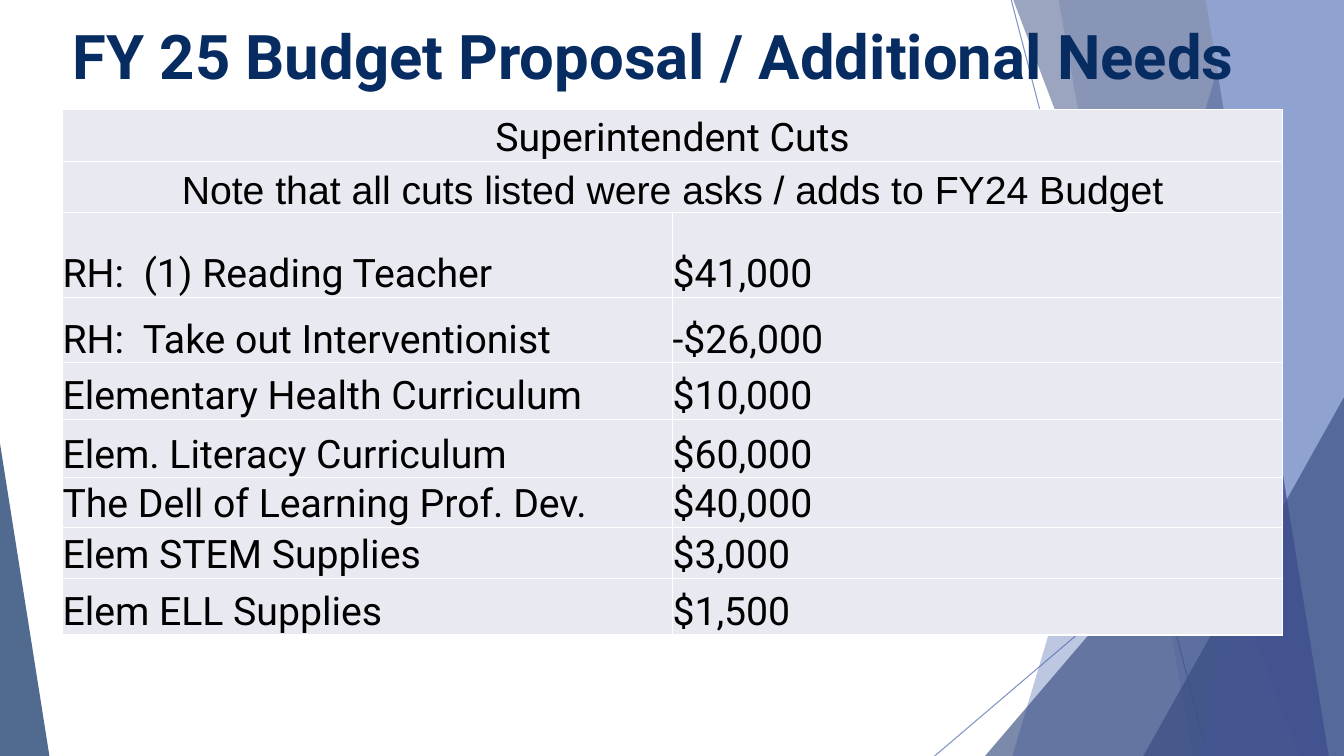
from dataclasses import dataclass

from lxml.etree import SubElement
from pptx import Presentation
from pptx.dml.color import RGBColor
from pptx.enum.shapes import MSO_CONNECTOR, MSO_SHAPE
from pptx.enum.text import MSO_ANCHOR, PP_ALIGN
from pptx.oxml.ns import qn
from pptx.util import Inches, Pt


@dataclass(frozen=True)
class Theme:
    blue: str = "4A66AC"
    deep_blue: str = "384C81"
    violet: str = "5C64B7"
    light_blue: str = "90A2CF"
    navy: str = "072C62"
    cell: str = "E9EAF1"
    white: str = "FFFFFF"
    black: str = "000000"
    font: str = "Roboto"
    note_font: str = "Arial"
    title_size: int = 44
    body_size: int = 28


THEME = Theme()
WIDTH, HEIGHT = 13.33, 7.5

HEADINGS = [
    ("Superintendent Cuts", THEME.font),
    ("Note that all cuts listed were asks / adds to FY24 Budget", THEME.note_font),
]
CUTS = [
    ("RH:  (1) Reading Teacher", "$41,000"),
    ("RH:  Take out Interventionist", "-$26,000"),
    ("Elementary Health Curriculum", "$10,000"),
    ("Elem. Literacy Curriculum", "$60,000"),
    ("The Dell of Learning Prof. Dev.", "$40,000"),
    ("Elem STEM Supplies", "$3,000"),
    ("Elem ELL Supplies", "$1,500"),
]
ROW_HEIGHTS = [0.51, 0.51, 0.84, 0.65, 0.56, 0.58, 0.49, 0.51, 0.56]


def paint(fill, color, opacity=100):
    """Fill with a solid colour at the given opacity in percent."""
    fill.solid()
    fill.fore_color.rgb = RGBColor.from_string(color)
    if opacity < 100:
        clr = fill._xPr.find(qn("a:solidFill"))[0]
        SubElement(clr, qn("a:alpha"), val=str(opacity * 1000))


def finish(sp, color, opacity):
    paint(sp.fill, color, opacity)
    sp.line.fill.background()
    sp.shadow.inherit = False


def add_ray(s, start, end):
    line = s.shapes.add_connector(MSO_CONNECTOR.STRAIGHT, *map(Inches, start + end))
    line.line.width = Pt(0.75)
    paint(line.line.fill, THEME.blue, 70)
    SubElement(line._element.spPr, qn("a:effectLst"))


def add_facet(s, top_x, bottom_x, color, opacity=100):
    """Add a full-height panel from a slanted left edge to the slide's right edge."""
    right, bottom = Inches(WIDTH), Inches(HEIGHT)
    builder = s.shapes.build_freeform(Inches(top_x), 0)
    builder.add_line_segments([(right, 0), (right, bottom), (Inches(bottom_x), bottom)])
    finish(builder.convert_to_shape(), color, opacity)


def add_corner(s, left, top, width, apex, color, opacity):
    """Add a triangle standing on the bottom edge; apex is 0 for left, 1 for right."""
    sp = s.shapes.add_shape(MSO_SHAPE.ISOSCELES_TRIANGLE, Inches(left), Inches(top),
                            Inches(width), Inches(HEIGHT - top))
    sp.adjustments[0] = apex
    finish(sp, color, opacity)


def add_backdrop(s):
    add_ray(s, (10.03, 0), (11.98, HEIGHT))
    add_ray(s, (WIDTH, 4.04), (9.27, HEIGHT))
    add_facet(s, 12.28, 10.04, THEME.blue, 36)
    add_facet(s, 10.5, 11.83, THEME.blue, 20)
    add_corner(s, 9.77, 3.34, 3.56, 1, THEME.deep_blue, 66)
    add_facet(s, 10.05, 12.89, THEME.deep_blue, 50)
    add_facet(s, 13.03, 11.92, THEME.violet, 70)
    add_facet(s, 11.96, 13.18, THEME.light_blue)
    add_corner(s, 11.34, 3.94, 1.99, 1, THEME.deep_blue, 66)
    add_corner(s, 0, 4.4, 0.49, 0, THEME.navy, 70)


def add_run(p, text, size, color, font=THEME.font, bold=False):
    r = p.add_run()
    r.text = text
    r.font.name = font
    r.font.size = Pt(size)
    r.font.bold = bold
    r.font.color.rgb = RGBColor.from_string(color)


def add_title(s, text):
    box = s.shapes.add_textbox(Inches(0.62), Inches(0.13), Inches(12.1), Inches(1.53))
    tf = box.text_frame
    tf.word_wrap = True
    add_run(tf.paragraphs[0], text, THEME.title_size, THEME.navy, bold=True)


def add_borders(cell):
    tc_pr = cell._tc.get_or_add_tcPr()
    for side in ("lnL", "lnR", "lnT", "lnB"):
        ln = SubElement(tc_pr, qn(f"a:{side}"), w=str(Pt(1)))
        SubElement(SubElement(ln, qn("a:solidFill")), qn("a:srgbClr"), val=THEME.white)


def style_cell(cell):
    add_borders(cell)
    paint(cell.fill, THEME.cell)
    cell.vertical_anchor = MSO_ANCHOR.BOTTOM
    cell.margin_left = cell.margin_right = cell.margin_top = cell.margin_bottom = 0


def write_cell(cell, text, font=THEME.font, align=PP_ALIGN.LEFT):
    p = cell.text_frame.paragraphs[0]
    p.alignment = align
    add_run(p, text, THEME.body_size, THEME.black, font)


def add_cuts_table(s):
    frame = s.shapes.add_table(len(ROW_HEIGHTS), 2, Inches(0.62), Inches(1.09),
                               Inches(12.1), Inches(sum(ROW_HEIGHTS)))
    table = frame.table
    table.first_row = table.horz_banding = False
    for row, height in zip(table.rows, ROW_HEIGHTS):
        row.height = Inches(height)
    for cell in table.iter_cells():
        style_cell(cell)
    for i, (text, font) in enumerate(HEADINGS):
        table.cell(i, 0).merge(table.cell(i, 1))
        write_cell(table.cell(i, 0), text, font, PP_ALIGN.CENTER)
    for i, cut in enumerate(CUTS, start=len(HEADINGS)):
        for j, text in enumerate(cut):
            write_cell(table.cell(i, j), text)


def main():
    prs = Presentation()
    prs.slide_width, prs.slide_height = Inches(WIDTH), Inches(HEIGHT)
    s = prs.slides.add_slide(prs.slide_layouts[6])
    add_backdrop(s)
    add_title(s, "FY 25 Budget Proposal / Additional Needs")
    add_cuts_table(s)
    prs.save("out.pptx")


if __name__ == "__main__":
    main()
